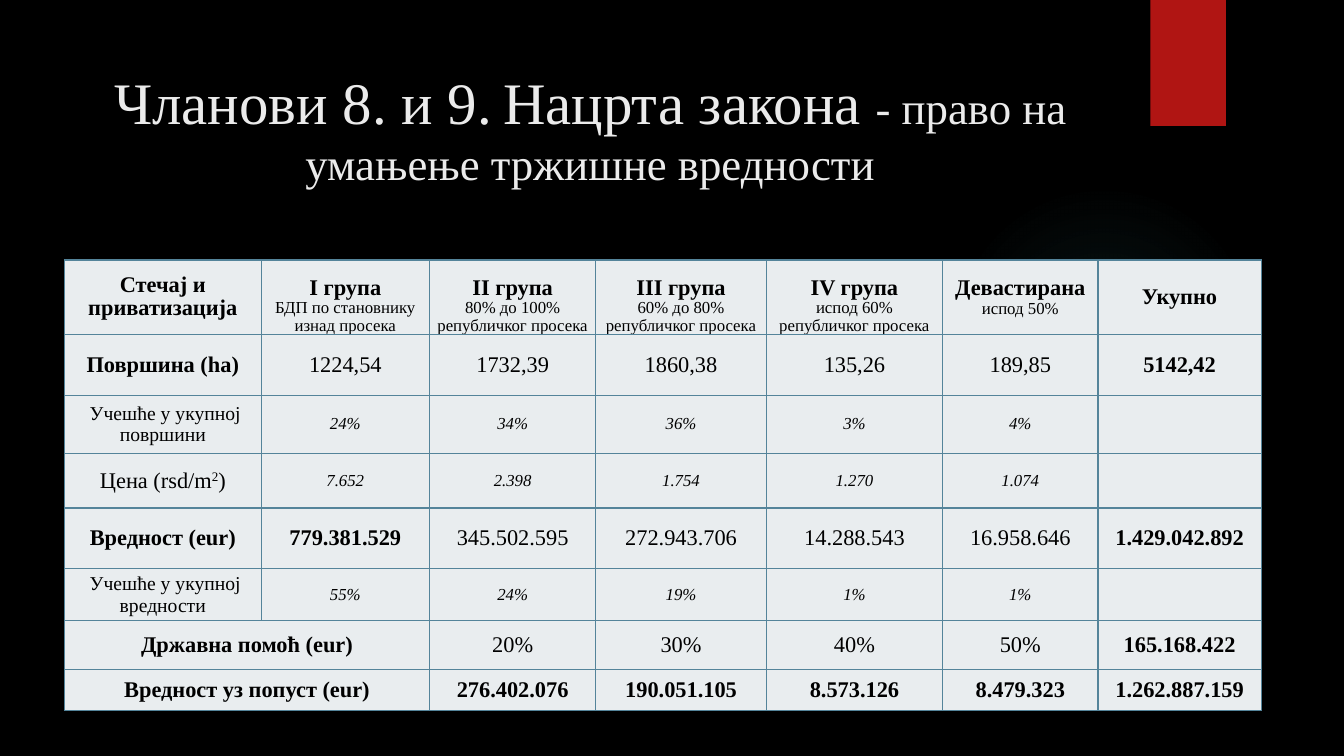
from dataclasses import dataclass

from lxml import etree
from pptx import Presentation
from pptx import util as u
from pptx.dml import color
from pptx.enum import shapes, text
from pptx.oxml import ns


@dataclass(frozen=True)
class Theme:
    """Colours, font and type sizes of the slide."""
    font: str = "Times New Roman"
    background: str = "000000"
    title: str = "EBEBEB"
    ribbon: str = "B01513"
    glow: str = "50B9C1"
    cell: str = "E9EDEF"
    border: str = "54849A"
    ink: str = "000000"
    title_large: int = 42
    title_small: int = 32
    body: int = 16
    label: int = 14
    small: int = 12


THEME = Theme()
BOLD = {"size": u.Pt(THEME.body), "bold": True}
PLAIN = {"size": u.Pt(THEME.body), "bold": False}
LABEL = {"size": u.Pt(THEME.label), "bold": False}
NOTE = {"size": u.Pt(THEME.small), "bold": False}
SHARE = {"size": u.Pt(THEME.small), "bold": False, "italic": True}
LARGE = {"size": u.Pt(THEME.title_large)}
SMALL = {"size": u.Pt(THEME.title_small)}

TITLE = [("Чланови 8. и 9.", LARGE), (" ", SMALL), ("Нацрта закона ", LARGE),
         ("- право на умањење тржишне вредности", SMALL)]
COLUMNS = [1.95, 1.67, 1.65, 1.69, 1.75, 1.54, 1.62]
HEIGHTS = [0.74, 0.6, 0.58, 0.54, 0.6, 0.52, 0.48, 0.41]
GROUPS = [
    ("Стечај и приватизација", ""),
    ("I група", "БДП по становнику изнад просека"),
    ("II група", "80% до 100% републичког просека"),
    ("III група", "60% до 80% републичког просека"),
    ("IV група", "испод 60% републичког просека"),
    ("Девастирана", "испод 50%"),
    ("Укупно", ""),
]
BOTTOM_GROUPS = range(1, 5)
MEASURES = [
    ([("Површина (ha)", BOLD)], PLAIN,
     ["1224,54", "1732,39", "1860,38", "135,26", "189,85", "5142,42"]),
    ([(" Учешће у укупној површини", LABEL)], SHARE,
     ["24%", "34%", "36%", "3%", "4%", ""]),
    ([("Цена (rsd/m", PLAIN), ("2", {**PLAIN, "baseline": 30000}), (")", PLAIN)], SHARE,
     ["7.652", "2.398", "1.754", "1.270", "1.074", ""]),
    ([("Вредност (eur)", BOLD)], PLAIN,
     ["779.381.529", "345.502.595", "272.943.706", "14.288.543", "16.958.646",
      "1.429.042.892"]),
    ([(" Учешће у укупној вредности", LABEL)], SHARE,
     ["55%", "24%", "19%", "1%", "1%", ""]),
    ([("Државна помоћ (eur)", BOLD)], PLAIN,
     ["", "20%", "30%", "40%", "50%", "165.168.422"]),
    ([("Вредност уз попуст (eur)", BOLD)], BOLD,
     ["", "276.402.076", "190.051.105", "8.573.126", "8.479.323", "1.262.887.159"]),
]
MERGED_ROWS = (6, 7)
HIGHLIGHT = "779.381.529"


def rgb(value):
    """Return an RGB colour from its hex value."""
    return color.RGBColor.from_string(value)


def apply(target, values):
    """Set every attribute in values on the target."""
    for name, value in values.items():
        setattr(target, name, value)


def write_paragraph(paragraph, runs, ink, spacing=1.0):
    """Fill a centred paragraph with formatted runs."""
    apply(paragraph, {"alignment": text.PP_ALIGN.CENTER, "line_spacing": spacing})
    for wording, style in runs:
        run = paragraph.add_run()
        run.text = wording
        values = dict(style)
        baseline = values.pop("baseline", None)
        apply(run.font, {"name": THEME.font, **values})
        run.font.color.rgb = rgb(ink)
        if baseline:
            run._r.get_or_add_rPr().set("baseline", str(baseline))


def add_shape(slide, kind, box, fill):
    """Add a plain shape without outline or shadow."""
    shape = slide.shapes.add_shape(kind, *map(u.Inches, box))
    shape.shadow.inherit = False
    shape.line.fill.background()
    shape.fill.solid()
    shape.fill.fore_color.rgb = rgb(fill)
    return shape


def add_glow(slide):
    """Add the faint round glow behind the table."""
    glow = add_shape(slide, shapes.MSO_SHAPE.OVAL, (9.41, 1.83, 3.08, 3.08), THEME.glow)
    stops = "".join(
        f'<a:gs pos="{place}000"><a:srgbClr val="{THEME.glow}">'
        f'<a:alpha val="{alpha}000"/></a:srgbClr></a:gs>'
        for place, alpha in ((0, 7), (36, 6), (69, 0), (100, 0)))
    gradient = etree.fromstring(
        f'<a:gradFill {ns.nsdecls("a")}><a:gsLst>{stops}</a:gsLst><a:path path="circle">'
        '<a:fillToRect l="50000" t="50000" r="50000" b="50000"/></a:path></a:gradFill>')
    solid = glow._element.spPr.find(ns.qn("a:solidFill"))
    solid.getparent().replace(solid, gradient)


def set_title(slide):
    """Place and write the slide title."""
    title = slide.shapes.title
    apply(title, dict(zip(("left", "top", "width", "height"),
                          map(u.Inches, (0.71, 0.5, 10.29, 1.53)))))
    apply(title.text_frame, {"word_wrap": True, "auto_size": text.MSO_AUTO_SIZE.NONE,
                             "vertical_anchor": text.MSO_ANCHOR.MIDDLE})
    write_paragraph(title.text_frame.paragraphs[0], TITLE, THEME.title)


def format_cell(cell, side):
    """Set the margins, borders and fill of a cell."""
    apply(cell, {"margin_left": u.Inches(side), "margin_right": u.Inches(side),
                 "margin_top": 0, "margin_bottom": 0,
                 "vertical_anchor": text.MSO_ANCHOR.MIDDLE})
    properties = cell._tc.get_or_add_tcPr()
    for edge in ("lnL", "lnR", "lnT", "lnB"):
        line = etree.SubElement(properties, ns.qn(f"a:{edge}"), w=str(u.Pt(1)))
        paint = etree.SubElement(line, ns.qn("a:solidFill"))
        etree.SubElement(paint, ns.qn("a:srgbClr"), val=THEME.border)
    cell.fill.solid()
    cell.fill.fore_color.rgb = rgb(THEME.cell)


def write_header(table):
    """Write the group names and their income ranges."""
    for column, (group, income) in enumerate(GROUPS):
        cell = table.cell(0, column)
        frame = cell.text_frame
        write_paragraph(frame.paragraphs[0], [(group, BOLD)], THEME.ink, 0.93)
        if income:
            write_paragraph(frame.add_paragraph(), [(income, NOTE)], THEME.ink, 0.93)
        if column in BOTTOM_GROUPS:
            cell.vertical_anchor = text.MSO_ANCHOR.BOTTOM


def write_measures(table):
    """Write the row labels, group values and totals."""
    for row, (label, style, values) in enumerate(MEASURES, 1):
        write_paragraph(table.cell(row, 0).text_frame.paragraphs[0], label, THEME.ink)
        for column, value in enumerate(values, 1):
            strong = column == len(values) or value == HIGHLIGHT
            if value:
                write_paragraph(table.cell(row, column).text_frame.paragraphs[0],
                                [(value, BOLD if strong else style)], THEME.ink)


def add_value_table(slide):
    """Add the table of areas, prices and values by group."""
    box = map(u.Inches, (0.64, 2.58, sum(COLUMNS), sum(HEIGHTS)))
    table = slide.shapes.add_table(len(HEIGHTS), len(COLUMNS), *box).table
    apply(table, {"first_row": False, "horz_banding": False})
    for column, width in zip(table.columns, COLUMNS):
        column.width = u.Inches(width)
    for index, height in enumerate(HEIGHTS):
        table.rows[index].height = u.Inches(height)
        for column in range(len(COLUMNS)):
            format_cell(table.cell(index, column), 0.07 if 0 in (index, column) else 0)
    for row in MERGED_ROWS:
        table.cell(row, 0).merge(table.cell(row, 1))
    write_header(table)
    write_measures(table)


def main():
    """Build and save the slide."""
    deck = Presentation()
    apply(deck, {"slide_width": u.Inches(13.33), "slide_height": u.Inches(7.5)})
    slide = deck.slides.add_slide(deck.slide_layouts[5])
    slide.background.fill.solid()
    slide.background.fill.fore_color.rgb = rgb(THEME.background)
    add_glow(slide)
    add_shape(slide, shapes.MSO_SHAPE.RECTANGLE, (11.41, 0, 0.75, 1.25), THEME.ribbon)
    set_title(slide)
    add_value_table(slide)
    deck.save("out.pptx")


if __name__ == "__main__":
    main()
